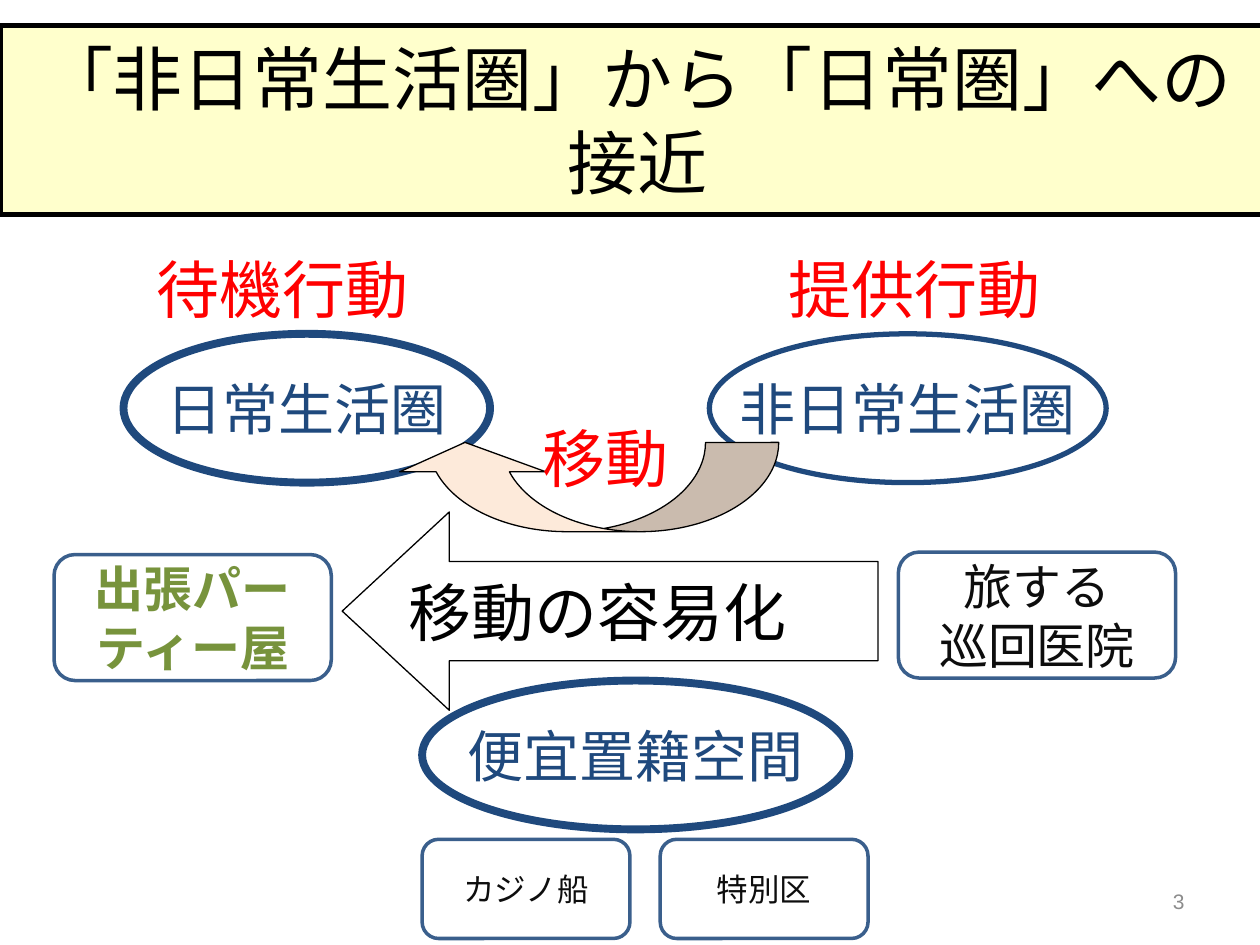
import pptx
import pptx.util
import pptx.dml.color
import pptx.enum.shapes
import pptx.enum.text

Cm, Pt = pptx.util.Cm, pptx.util.Pt
RGB = pptx.dml.color.RGBColor
KIND = pptx.enum.shapes.MSO_SHAPE
ALIGN = pptx.enum.text.PP_ALIGN
ANCHOR = pptx.enum.text.MSO_ANCHOR
FIT = pptx.enum.text.MSO_AUTO_SIZE

BLACK = RGB(0x00, 0x00, 0x00)
WHITE = RGB(0xFF, 0xFF, 0xFF)
CREAM = RGB(0xFF, 0xFF, 0xCC)
PEACH = RGB(0xFD, 0xEA, 0xDA)
NAVY = RGB(0x1F, 0x49, 0x7D)
BLUE = RGB(0x3A, 0x5F, 0x8C)
RED = RGB(0xFF, 0x00, 0x00)
GREEN = RGB(0x77, 0x93, 0x3C)
INK = RGB(0x0D, 0x0D, 0x0D)
GREY = RGB(0x8C, 0x8C, 0x8C)


def place(part, box):
    part.left, part.top, part.width, part.height = (Cm(n) for n in box)


def write(part, text, size, color, align=ALIGN.CENTER, anchor=ANCHOR.MIDDLE,
          wrap=True, bold=None, font="Calibri"):
    frame = part.text_frame
    frame.text = text
    frame.word_wrap = wrap
    frame.vertical_anchor = anchor
    for para in frame.paragraphs:
        para.alignment = align
        for run in para.runs:
            run.font.name, run.font.size = font, Pt(size)
            run.font.bold = bold
            run.font.color.rgb = color


def paint(part, fill, line, width):
    if fill is None:
        part.fill.background()
    else:
        part.fill.solid()
        part.fill.fore_color.rgb = fill
    part.line.color.rgb = line
    part.line.width = Pt(width)


def draw(slide, kind, box, fill, line, width):
    part = slide.shapes.add_shape(kind, *(Cm(n) for n in box))
    part.shadow.inherit = False
    paint(part, fill, line, width)
    return part


def flip(part, *sides):
    for side in sides:
        part.element.spPr.xfrm.set(side, "1")


def add_head(slide, box, text):
    head = slide.shapes.title
    place(head, box)
    paint(head, CREAM, BLACK, 3)
    write(head, text, 40, BLACK)
    head.text_frame.auto_size = FIT.NONE


def add_page(slide, box, text):
    page = slide.shapes.add_textbox(*(Cm(n) for n in box))
    write(page, text, 12, GREY, ALIGN.RIGHT, font="Arial")


def add_label(slide, box, text):
    label = slide.shapes.add_textbox(*(Cm(n) for n in box))
    write(label, text, 36, RED, ALIGN.LEFT, ANCHOR.TOP, wrap=False)
    label.text_frame.auto_size = FIT.SHAPE_TO_FIT_TEXT


def add_zone(slide, box, text, width=4.5):
    zone = draw(slide, KIND.OVAL, box, None, NAVY, width)
    write(zone, text, 32, NAVY, wrap=False)


def add_moves(slide, box):
    left, top, width, height = box
    # Curved arrow back to the daily zone, with its label
    bend = draw(slide, KIND.CURVED_DOWN_ARROW, (left + 1, top, 7.8, 1.8),
                PEACH, BLACK, 0.75)
    bend.adjustments[0] = 0.82
    bend.adjustments[1] = 1.64
    bend.adjustments[2] = 0.33
    flip(bend, "flipH", "flipV")
    add_label(slide, (left + 3.79, top - 0.59, 3.05, 1.78), "移動")
    # Block arrow along the bottom of the box
    block = draw(slide, KIND.RIGHT_ARROW,
                 (left, top + height - 4, width, 4), WHITE, BLACK, 0.75)
    block.adjustments[1] = 0.54
    flip(block, "flipH")
    write(block, "移動の容易化", 36, BLACK, ALIGN.LEFT, wrap=False)


def add_case(slide, box, text, size, color=INK, bold=None):
    case = draw(slide, KIND.ROUNDED_RECTANGLE, box, None, BLUE, 2)
    write(case, text, size, color, bold=bold)


def main():
    deck = pptx.Presentation()
    deck.slide_width, deck.slide_height = Cm(25.4), Cm(19.05)
    slide = deck.slides.add_slide(deck.slide_layouts[5])

    add_head(slide, (0, 0.51, 25.7, 3.81), "「非日常生活圏」から「日常圏」への接近")
    add_page(slide, (18.21, 17.65, 5.92, 1.02), "3")

    # The two zones, the moves between them and their labels
    add_zone(slide, (2.49, 6.73, 7.39, 3), "日常生活圏")
    add_zone(slide, (14.3, 6.73, 8, 3), "非日常生活圏", 3)
    add_moves(slide, (6.9, 8.92, 10.8, 5.4))
    for left, text in ((15.65, "提供行動"), (2.9, "待機行動")):
        add_label(slide, (left, 4.93, 5.64, 1.8), text)

    # The third zone and the cases
    add_zone(slide, (8.51, 13.72, 8.61, 3), "便宜置籍空間")
    add_case(slide, (18.11, 11.13, 5.59, 2.54), "旅する\n巡回医院", 28)
    add_case(slide, (1.09, 11.18, 5.59, 2.54), "出張パーティー屋", 28, GREEN, True)
    for col, text in enumerate(("カジノ船", "特別区")):
        add_case(slide, (8.51 + 4.8 * col, 16.92, 4.19, 2), text, 18)

    deck.save("out.pptx")


if __name__ == "__main__":
    main()
